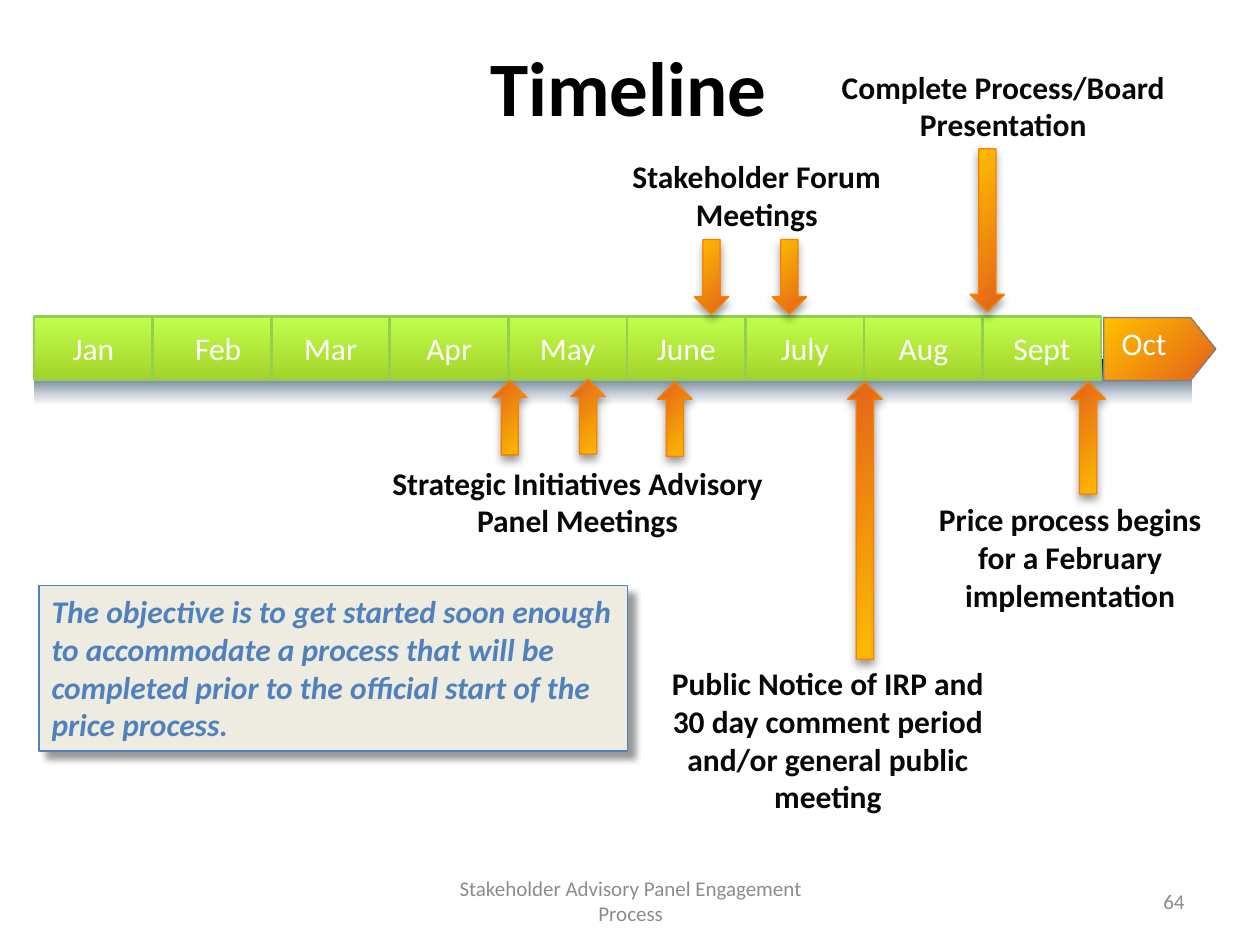
import dataclasses

import lxml.etree
import pptx
import pptx.dml.color
import pptx.enum.shapes
import pptx.enum.text
import pptx.oxml.ns
import pptx.util

Cm = pptx.util.Cm
Pt = pptx.util.Pt
Align = pptx.enum.text.PP_ALIGN
Anchor = pptx.enum.text.MSO_ANCHOR
Preset = pptx.enum.shapes.MSO_SHAPE
qn = pptx.oxml.ns.qn


@dataclasses.dataclass(frozen=True)
class Theme:
    font: str = "Calibri"
    title_size: int = 44
    body_size: int = 18
    footer_size: int = 12
    title: str = "000000"
    label: str = "080808"
    footer: str = "8C8C8C"
    white: str = "FFFFFF"
    accent: str = "4F81BD"
    panel: str = "EEECE1"
    month_line: str = "92D050"
    arrow_line: str = "FC7E00"
    tip_line: str = "808080"
    shadow: str = "000000"
    green: tuple = ("C0FF4D", "A4D329")
    orange: tuple = ("FFC000", "E36119")
    navy: tuple = ("070D13", "1F497D")


def rgb(color):
    return pptx.dml.color.RGBColor.from_string(color)


class TimelineSlide:
    def __init__(self, slide, theme):
        self.slide = slide
        self.theme = theme

    def add_words(self, shape, text, size, color, align=Align.CENTER,
                  anchor=Anchor.TOP, bold=False, italic=False):
        frame = shape.text_frame
        frame.word_wrap = True
        frame.vertical_anchor = anchor
        paragraph = frame.paragraphs[0]
        paragraph.alignment = align
        run = paragraph.add_run()
        run.text = text
        font = run.font
        font.name, font.size = self.theme.font, Pt(size)
        font.bold, font.italic = bold, italic
        font.color.rgb = rgb(color)

    def text(self, box, text, size, color, **style):
        shape = self.slide.shapes.add_textbox(*map(Cm, box))
        self.add_words(shape, text, size, color, **style)

    def label(self, box, text):
        self.text(box, text, self.theme.body_size, self.theme.label, bold=True)

    def shape(self, preset, box, fill, angle=0, line=None, line_width=0.75):
        """Add a preset shape; a pair of fill colours makes a gradient, angle clockwise."""
        shape = self.slide.shapes.add_shape(preset, *map(Cm, box))
        shape.shadow.inherit = False
        if isinstance(fill, tuple):
            shape.fill.gradient()
            shape.fill.gradient_angle = 360 - angle
            for stop, color in zip(shape.fill.gradient_stops, fill):
                stop.color.rgb = rgb(color)
        else:
            shape.fill.solid()
            shape.fill.fore_color.rgb = rgb(fill)
        if line:
            shape.line.color.rgb = rgb(line)
            shape.line.width = Pt(line_width)
        else:
            shape.line.fill.background()
        return shape

    def cast_shadow(self, shape, blur, distance, angle):
        effects = shape._element.spPr.find(qn("a:effectLst"))
        shadow = lxml.etree.SubElement(
            effects, qn("a:outerShdw"), blurRad=str(Pt(blur)), dist=str(Pt(distance)),
            dir=str(angle * 60000), algn="ctr", rotWithShape="0")
        color = lxml.etree.SubElement(shadow, qn("a:srgbClr"), val=self.theme.shadow)
        lxml.etree.SubElement(color, qn("a:alpha"), val="40000")

    def fading_band(self, box):
        band = self.shape(Preset.RECTANGLE, box, self.theme.navy, 90)
        last_color = band._element.spPr.findall(".//" + qn("a:srgbClr"))[-1]
        lxml.etree.SubElement(last_color, qn("a:alpha"), val="0")

    def month(self, box, name, left_inset=0.25):
        cell = self.shape(Preset.RECTANGLE, box, self.theme.green, 90,
                          self.theme.month_line, 1.5)
        self.add_words(cell, name, self.theme.body_size, self.theme.white,
                       anchor=Anchor.MIDDLE)
        cell.text_frame.margin_left = Cm(left_inset)

    def final_month(self, box, name):
        left, top, width, height = box
        tip = self.shape(Preset.PENTAGON, box, self.theme.orange, 45, self.theme.tip_line)
        tip.adjustments[0] = 0.4
        self.text((left, top, 1.63, 1.02), name, self.theme.body_size, self.theme.white)

    def arrow(self, left, top, height, rotation=0):
        arrow = self.shape(Preset.DOWN_ARROW, (left, top, 0.69, height),
                           self.theme.orange, 45, self.theme.arrow_line)
        arrow.rotation = rotation
        self.cast_shadow(arrow, 5, 3, 90)

    def callout(self, box, text):
        panel = self.shape(Preset.RECTANGLE, box, self.theme.panel, line=self.theme.accent)
        self.cast_shadow(panel, 4, 6, 45)
        self.add_words(panel, text, self.theme.body_size, self.theme.accent,
                       align=Align.LEFT, bold=True, italic=True)


MONTHS = ["Jan", "Feb", "Mar", "Apr", "May", "June", "July", "Aug", "Sept"]
MONTH_LEFT, MONTH_TOP, MONTH_WIDTH, MONTH_HEIGHT = 0.69, 6.38, 2.39, 1.27

DOWN_ARROWS = [(14, 4.83, 1.5), (15.57, 4.83, 1.5), (19.56, 3, 3.28)]
UP_ARROWS = [(9.93, 7.67, 1.5), (11.51, 7.65, 1.5), (13.26, 7.7, 1.5),
             (17.09, 7.7, 5.59), (21.59, 7.7, 2.26)]

LABELS = [
    ((7.62, 9.22, 8.05, 1.8), "Strategic Initiatives Advisory Panel Meetings"),
    ((13.11, 13.26, 7.16, 3.33),
     "Public Notice of IRP and 30 day comment period and/or general public meeting"),
    ((11.46, 3.05, 7.59, 1.8), "Stakeholder Forum Meetings"),
    ((16.43, 1.24, 7.59, 1.8), "Complete Process/Board Presentation"),
    ((18.36, 9.96, 6.43, 2.57), "Price process begins for a February implementation"),
]


def main():
    presentation = pptx.Presentation()
    presentation.slide_width, presentation.slide_height = Cm(25.4), Cm(19.05)
    theme = Theme()
    timeline = TimelineSlide(
        presentation.slides.add_slide(presentation.slide_layouts[6]), theme)

    timeline.text((1.24, 0.3, 22.86, 2.84), "Timeline", theme.title_size, theme.title,
                  anchor=Anchor.MIDDLE, bold=True)
    timeline.text((8.69, 17.65, 8.05, 1.02), "Stakeholder Advisory Panel Engagement Process",
                  theme.footer_size, theme.footer, anchor=Anchor.MIDDLE)
    timeline.text((18.21, 17.65, 5.92, 1.02), "64", theme.footer_size, theme.footer,
                  align=Align.RIGHT, anchor=Anchor.MIDDLE)

    timeline.fading_band((MONTH_LEFT, 7.24, 23.34, 0.89))
    timeline.final_month((22.25, 6.4, 2.26, MONTH_HEIGHT), "Oct")
    for index, name in enumerate(MONTHS):
        box = (MONTH_LEFT + index * MONTH_WIDTH, MONTH_TOP, MONTH_WIDTH, MONTH_HEIGHT)
        timeline.month(box, name, left_inset=0.5 if name == "Feb" else 0.25)

    for left, top, height in DOWN_ARROWS:
        timeline.arrow(left, top, height)
    for left, top, height in UP_ARROWS:
        timeline.arrow(left, top, height, rotation=180)
    for box, text in LABELS:
        timeline.label(box, text)
    timeline.callout(
        (0.79, 11.81, 11.86, 3.33),
        "The objective is to get started soon enough to accommodate a process that will be "
        "completed prior to the official start of the price process.")

    presentation.save("out.pptx")


if __name__ == "__main__":
    main()
